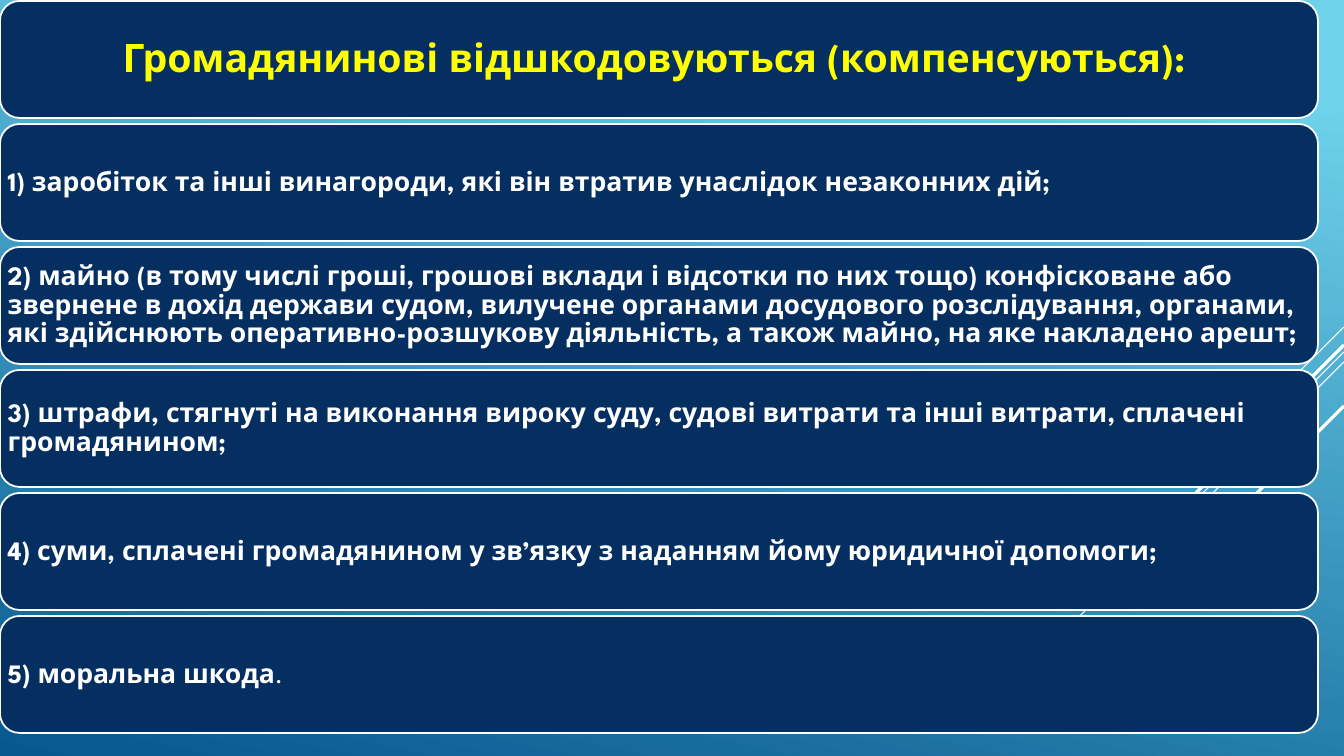
import pptx
import pptx.dml.color
import pptx.enum.shapes
import pptx.enum.text
import pptx.oxml
import pptx.oxml.ns
import pptx.util

SCALE = 914400 / 100.8
COLOURS = {
    "sky": "6ED2EB",
    "sea": "06588E",
    "navy": "052F61",
    "white": "FFFFFF",
    "yellow": "FFFF00",
}
TITLE = "Громадянинові відшкодовуються (компенсуються): "
ITEMS = [
    "1) заробіток та інші винагороди, які він втратив унаслідок незаконних дій;",
    "2) майно (в тому числі гроші, грошові вклади і відсотки по них тощо) "
    "конфісковане або звернене в дохід держави судом, вилучене органами "
    "досудового розслідування, органами, які здійснюють "
    "оперативно-розшукову діяльність, а також майно, на яке накладено арешт;",
    "3) штрафи, стягнуті на виконання вироку суду, судові витрати та інші "
    "витрати, сплачені громадянином;",
    "4) суми, сплачені громадянином у зв’язку з наданням йому юридичної допомоги;",
    "5) моральна шкода",
]
STRIPES = [
    (327, 101, 0.75),
    (352, 329, 0.75),
    (362, 209, 0.75),
    (345, 193, 2.25),
    (406, 140, 2.25),
]
WIDTH, HEIGHT = 1344, 756
PANEL_TOP, PANEL_PITCH = 1, 123
PANEL_WIDTH, PANEL_HEIGHT = 1318, 117


def px(length):
    return pptx.util.Emu(round(length * SCALE))


def colour(name):
    return pptx.dml.color.RGBColor.from_string(COLOURS[name])


def write(paragraph, text, size=19, ink="white", bold=True, font="League Spartan"):
    run = paragraph.add_run()
    run.text = text
    run.font.name = font
    run.font.size = pptx.util.Pt(size)
    run.font.bold = bold
    run.font.color.rgb = colour(ink)


class SlideBuilder:
    """Draws the styled elements of the current slide."""

    def __init__(self, presentation):
        self.slide = presentation.slides.add_slide(presentation.slide_layouts[5])
        self.shapes = self.slide.shapes

    def background(self, start, end, angle):
        fill = self.slide.background.fill
        fill.gradient()
        fill.gradient_angle = 360 - angle
        for stop, position, name in zip(fill.gradient_stops, (0.1, 1), (start, end)):
            stop.position = position
            stop.color.rgb = colour(name)

    def stripe(self, top, run, weight):
        connector = self.shapes.add_connector(
            pptx.enum.shapes.MSO_CONNECTOR.STRAIGHT,
            px(WIDTH), px(top), px(WIDTH - run), px(top + run),
        )
        connector.line.color.rgb = colour("white")
        connector.line.width = pptx.util.Pt(weight)
        properties = connector._element.spPr
        properties.append(pptx.oxml.parse_xml(
            f"<a:effectLst {pptx.oxml.ns.nsdecls('a')}/>"
        ))

    def panel(self, top):
        shape = self.shapes.add_shape(
            pptx.enum.shapes.MSO_SHAPE.ROUNDED_RECTANGLE,
            0, px(top), px(PANEL_WIDTH), px(PANEL_HEIGHT),
        )
        shape.shadow.inherit = False
        shape.fill.solid()
        shape.fill.fore_color.rgb = colour("navy")
        shape.line.color.rgb = colour("white")
        shape.line.width = pptx.util.Pt(1.25)
        return shape

    def paragraph(self, shape, inset, alignment):
        frame = shape.text_frame
        frame.word_wrap = True
        frame.auto_size = pptx.enum.text.MSO_AUTO_SIZE.NONE
        frame.vertical_anchor = pptx.enum.text.MSO_ANCHOR.MIDDLE
        frame.margin_left = frame.margin_right = px(inset)
        frame.margin_top = frame.margin_bottom = px(inset)
        paragraph = frame.paragraphs[0]
        paragraph.alignment = alignment
        paragraph.line_spacing = 0.9
        return paragraph

    def title(self, text, top):
        self.panel(top)
        title = self.shapes.title
        title.left, title.top = 0, px(top)
        title.width, title.height = px(PANEL_WIDTH), px(PANEL_HEIGHT)
        title._element.getparent().append(title._element)
        paragraph = self.paragraph(title, 12, pptx.enum.text.PP_ALIGN.CENTER)
        write(paragraph, text, size=28, ink="yellow")

    def item(self, text, top):
        paragraph = self.paragraph(self.panel(top), 2, pptx.enum.text.PP_ALIGN.LEFT)
        write(paragraph, text)
        return paragraph


def main():
    presentation = pptx.Presentation()
    presentation.slide_width = px(WIDTH)
    presentation.slide_height = px(HEIGHT)
    builder = SlideBuilder(presentation)
    builder.background("sky", "sea", 102)
    for top, run, weight in STRIPES:
        builder.stripe(top, run, weight)
    builder.title(TITLE, PANEL_TOP)
    for row, text in enumerate(ITEMS, start=1):
        last_item = builder.item(text, PANEL_TOP + row * PANEL_PITCH)
    write(last_item, ".", bold=False)
    presentation.save("out.pptx")


if __name__ == "__main__":
    main()
